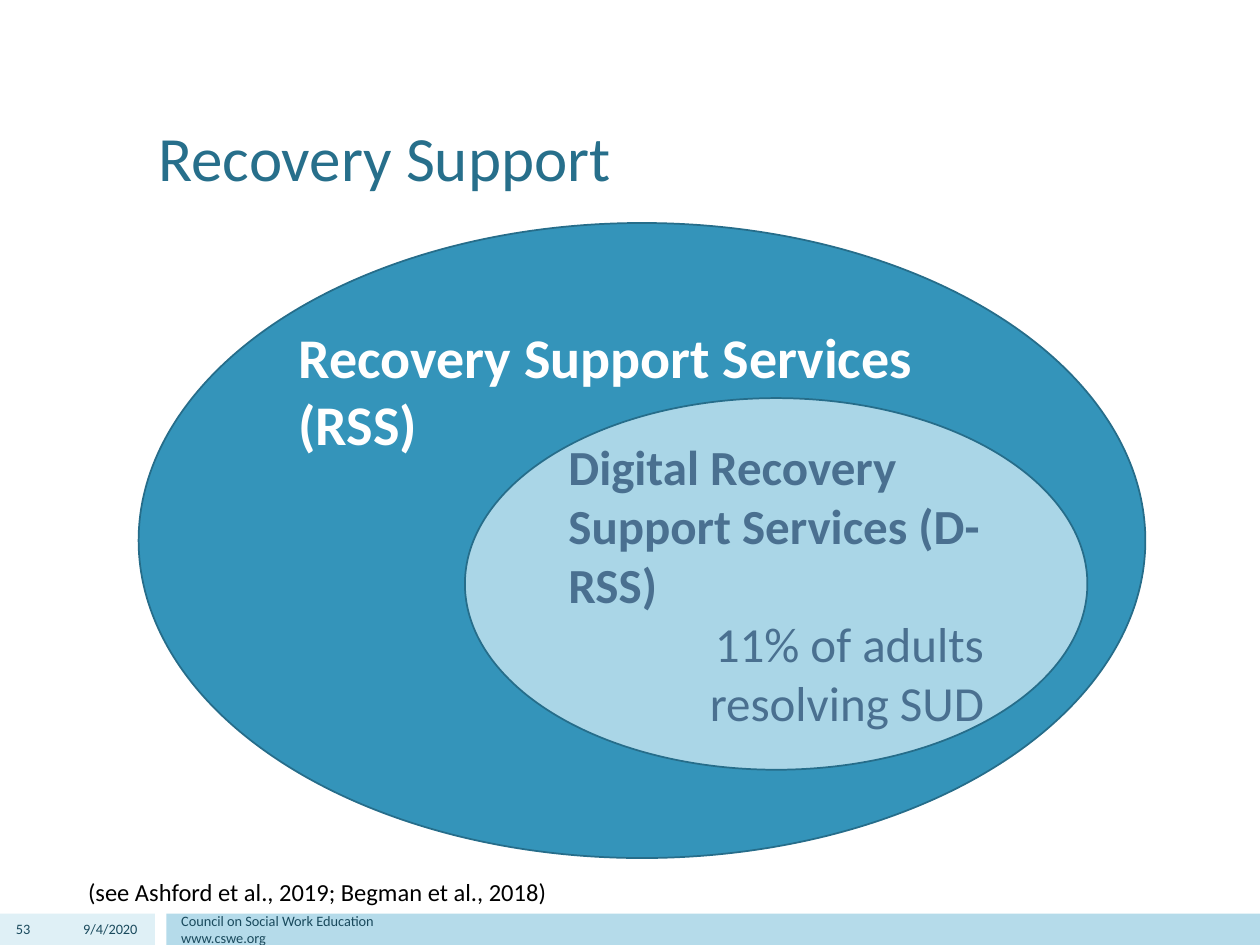
import pptx
import pptx.util
from pptx.dml.color import RGBColor
from pptx.enum.shapes import MSO_SHAPE
from pptx.enum.text import MSO_ANCHOR, PP_ALIGN

WIDE = pptx.util.Inches(10)
HIGH = pptx.util.Inches(7.5)
FONT = "Calibri"
EDGE = "266D8A"
DARK = "1A4A5D"
LEFT, RIGHT = PP_ALIGN.LEFT, PP_ALIGN.RIGHT
TOP, MIDDLE, BOTTOM = MSO_ANCHOR.TOP, MSO_ANCHOR.MIDDLE, MSO_ANCHOR.BOTTOM
# The footer band, in percent of the slide's height
BAND = (96.67, 3.33)


def tint(code):
    return RGBColor.from_string(code)


def place(x, y, w, h):
    """Turn percentages of the slide into lengths."""
    return [int(size * part / 100)
            for size, part in ((WIDE, x), (HIGH, y), (WIDE, w), (HIGH, h))]


def write(shape, lines, size, color, anchor=TOP, wrap=True):
    """Fill a shape with lines of (text, alignment, bold)."""
    frame = shape.text_frame
    frame.word_wrap = wrap
    frame.vertical_anchor = anchor
    for n, (text, align, bold) in enumerate(lines):
        para = frame.add_paragraph() if n else frame.paragraphs[0]
        para.text = text
        para.alignment = align
        para.font.name = FONT
        para.font.size = pptx.util.Pt(size)
        para.font.bold = bold
        para.font.color.rgb = tint(color)


def draw(slide, kind, box, fill, edge=None):
    shape = slide.shapes.add_shape(kind, *place(*box))
    shape.shadow.inherit = False
    shape.fill.solid()
    shape.fill.fore_color.rgb = tint(fill)
    if edge:
        shape.line.color.rgb = tint(edge)
        shape.line.width = pptx.util.Pt(1)
    else:
        shape.line.fill.background()
    return shape


def label(slide, box, *style, **more):
    write(slide.shapes.add_textbox(*place(*box)), *style, **more)


def footer(slide):
    top, high = BAND
    for x, w, fill in ((0, 12.3, "DFF0F6"), (13.2, 86.8, "B5DBEA")):
        draw(slide, MSO_SHAPE.RECTANGLE, (x, top, w, high), fill)
    parts = (
        (0, 3.4, RIGHT, ["53"]),
        (3.7, 8.2, RIGHT, ["9/4/2020"]),
        (13.4, 75, LEFT, ["Council on Social Work Education", "www.cswe.org"]),
    )
    for x, w, align, texts in parts:
        lines = [(text, align, False) for text in texts]
        label(slide, (x, top, w, high), lines, 8.2, DARK, MIDDLE)


def main():
    deck = pptx.Presentation()
    deck.slide_width, deck.slide_height = WIDE, HIGH
    slide = deck.slides.add_slide(deck.slide_layouts[6])

    footer(slide)
    label(slide, (11.6, 4, 76.9, 17.2),
          [("Recovery Support", LEFT, False)], 36, "276F8B", BOTTOM)
    label(slide, (6, 92.13, 38.8, 4.53),
          [("(see Ashford et al., 2019; Begman et al., 2018)", LEFT, False)],
          14, "000000", wrap=False)

    outer = draw(slide, MSO_SHAPE.OVAL, (11, 23.6, 79.9, 67.2), "3494BA", EDGE)
    write(outer, [("Recovery Support Services (RSS)", LEFT, True)],
          32, "FFFFFF")
    inner = draw(slide, MSO_SHAPE.OVAL, (36.9, 42.13, 49.4, 39.33),
                 "AAD6E7", EDGE)
    write(inner, [("Digital Recovery Support Services (D-RSS)", LEFT, True),
                  ("11% of adults resolving SUD", RIGHT, False)],
          28, "4A7090", MIDDLE)

    deck.save("out.pptx")


if __name__ == "__main__":
    main()
